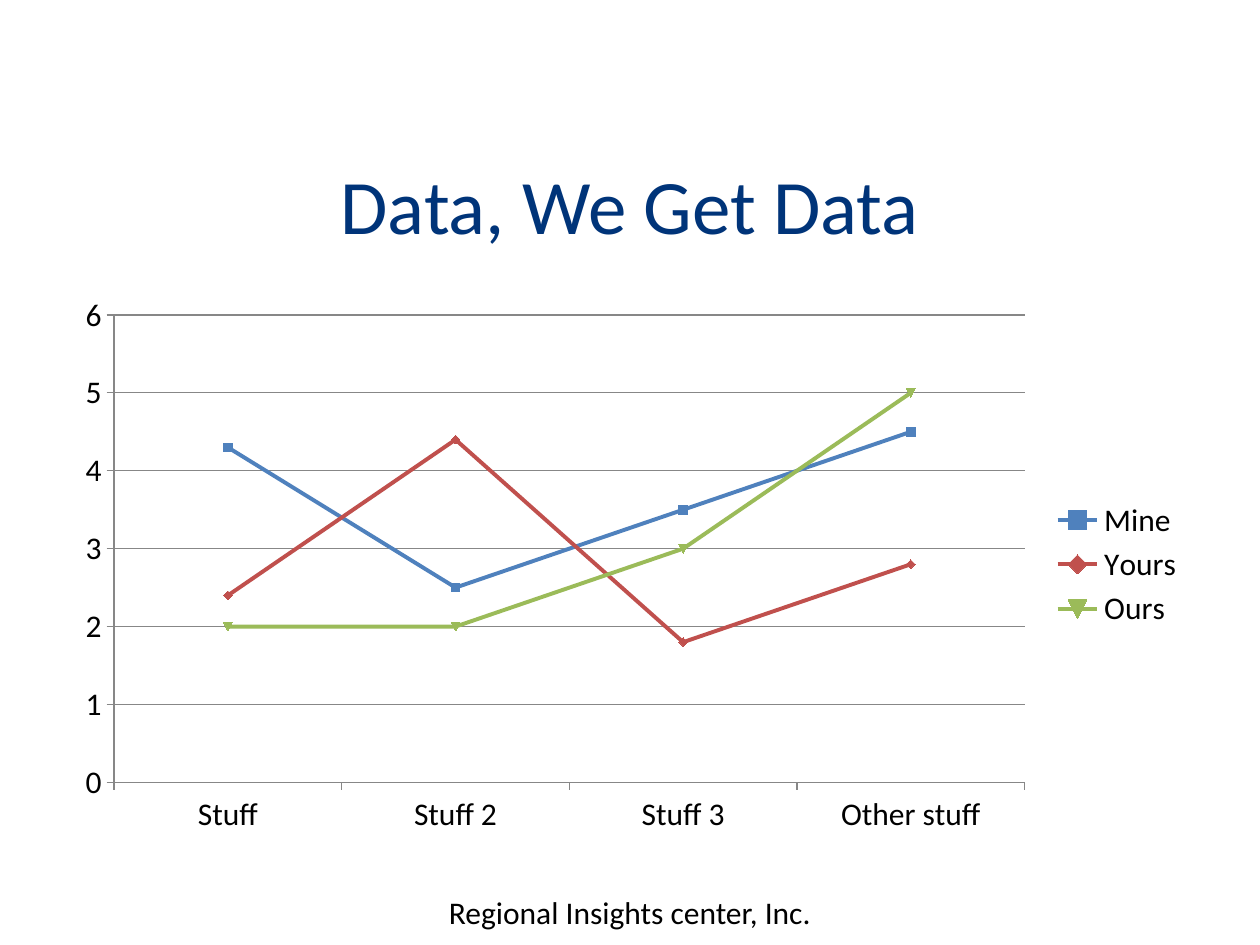
from dataclasses import dataclass

from pptx import Presentation
from pptx.chart.data import CategoryChartData
from pptx.dml.color import RGBColor
from pptx.enum.chart import XL_CHART_TYPE, XL_LEGEND_POSITION, XL_TICK_MARK
from pptx.enum.text import MSO_ANCHOR, MSO_AUTO_SIZE, PP_ALIGN
from pptx.util import Inches, Pt


@dataclass(frozen=True)
class Theme:
    font: str = "Calibri"
    title_size: int = 44
    body_size: int = 18
    title_color: str = "003479"
    text_color: str = "000000"
    line_color: str = "878787"
    series_colors: tuple = ("4F81BD", "C0504D", "9BBB59")


THEME = Theme()
CATEGORIES = ("Stuff", "Stuff 2", "Stuff 3", "Other stuff")
SERIES = {
    "Mine": (4.3, 2.5, 3.5, 4.5),
    "Yours": (2.4, 4.4, 1.8, 2.8),
    "Ours": (2, 2, 3, 5),
}


def box(left, top, width, height):
    return Inches(left), Inches(top), Inches(width), Inches(height)


def style_font(font, size, color):
    font.name = THEME.font
    font.size = Pt(size)
    font.color.rgb = RGBColor.from_string(color)


def style_line(line, color, width):
    line.color.rgb = RGBColor.from_string(color)
    line.width = Pt(width)


def write_text(shape, text, *, size, color, anchor=MSO_ANCHOR.TOP, wrap=True,
               auto_size=MSO_AUTO_SIZE.NONE):
    frame = shape.text_frame
    frame.word_wrap = wrap
    frame.auto_size = auto_size
    frame.vertical_anchor = anchor
    paragraph = frame.paragraphs[0]
    paragraph.alignment = PP_ALIGN.CENTER
    run = paragraph.add_run()
    run.text = text
    style_font(run.font, size, color)


def add_title(slide, text):
    title = slide.shapes.title
    title.left, title.top, title.width, title.height = box(0.5, 1.11, 9, 1.02)
    write_text(title, text, size=THEME.title_size, color=THEME.title_color,
               anchor=MSO_ANCHOR.MIDDLE)


def add_line_chart(slide):
    data = CategoryChartData()
    data.categories = CATEGORIES
    for name, values in SERIES.items():
        data.add_series(name, values)
    chart = slide.shapes.add_chart(
        XL_CHART_TYPE.LINE_MARKERS, *box(0.5, 2.26, 9, 4.44), data).chart
    chart.has_title = False
    style_font(chart.font, THEME.body_size, THEME.text_color)

    chart.has_legend = True
    chart.legend.position = XL_LEGEND_POSITION.RIGHT
    chart.legend.include_in_layout = False

    for axis in (chart.category_axis, chart.value_axis):
        axis.major_tick_mark = XL_TICK_MARK.OUTSIDE
        axis.minor_tick_mark = XL_TICK_MARK.NONE
        style_line(axis.format.line, THEME.line_color, 0.75)
    value_axis = chart.value_axis
    value_axis.minimum_scale, value_axis.maximum_scale = 0, 6
    value_axis.major_unit = 1
    value_axis.has_major_gridlines = True
    style_line(value_axis.major_gridlines.format.line, THEME.line_color, 0.75)

    plot = chart.plots[0]
    plot.vary_by_categories = False
    for series, color in zip(plot.series, THEME.series_colors):
        series.smooth = False
        style_line(series.format.line, color, 2.25)
        series.marker.size = 5
        fill = series.marker.format.fill
        fill.solid()
        fill.fore_color.rgb = RGBColor.from_string(color)
        style_line(series.marker.format.line, color, 0.75)


def add_footer(slide, text):
    footer = slide.shapes.add_textbox(*box(3.38, 7.04, 3.24, 0.4))
    write_text(footer, text, size=THEME.body_size, color=THEME.text_color,
               wrap=False, auto_size=MSO_AUTO_SIZE.SHAPE_TO_FIT_TEXT)


def main():
    presentation = Presentation()
    presentation.slide_width = Inches(10)
    presentation.slide_height = Inches(7.5)
    title_only = presentation.slide_layouts[5]
    slide = presentation.slides.add_slide(title_only)
    add_title(slide, "Data, We Get Data")
    add_line_chart(slide)
    add_footer(slide, "Regional Insights center, Inc.")
    presentation.save("out.pptx")


if __name__ == "__main__":
    main()
